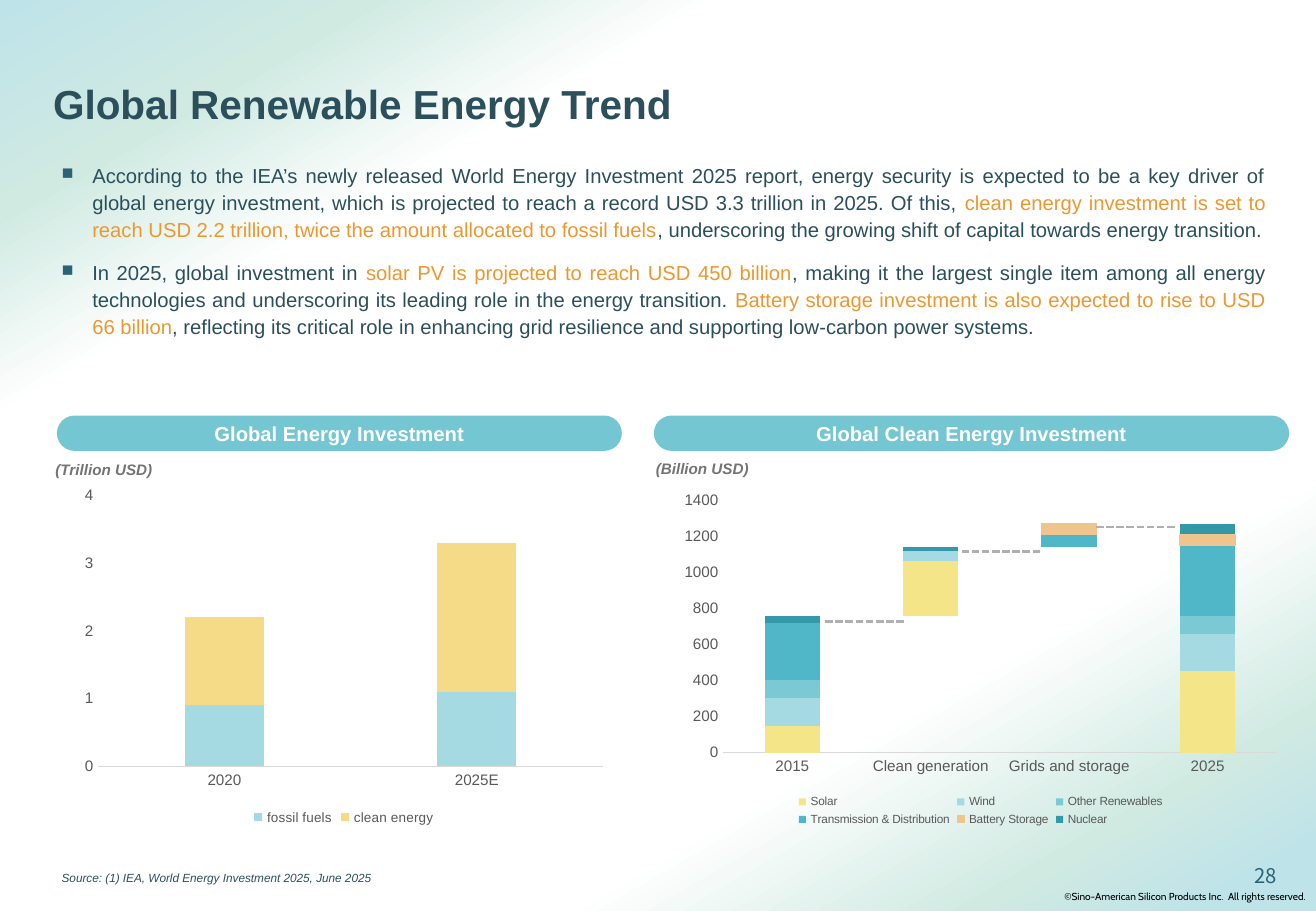
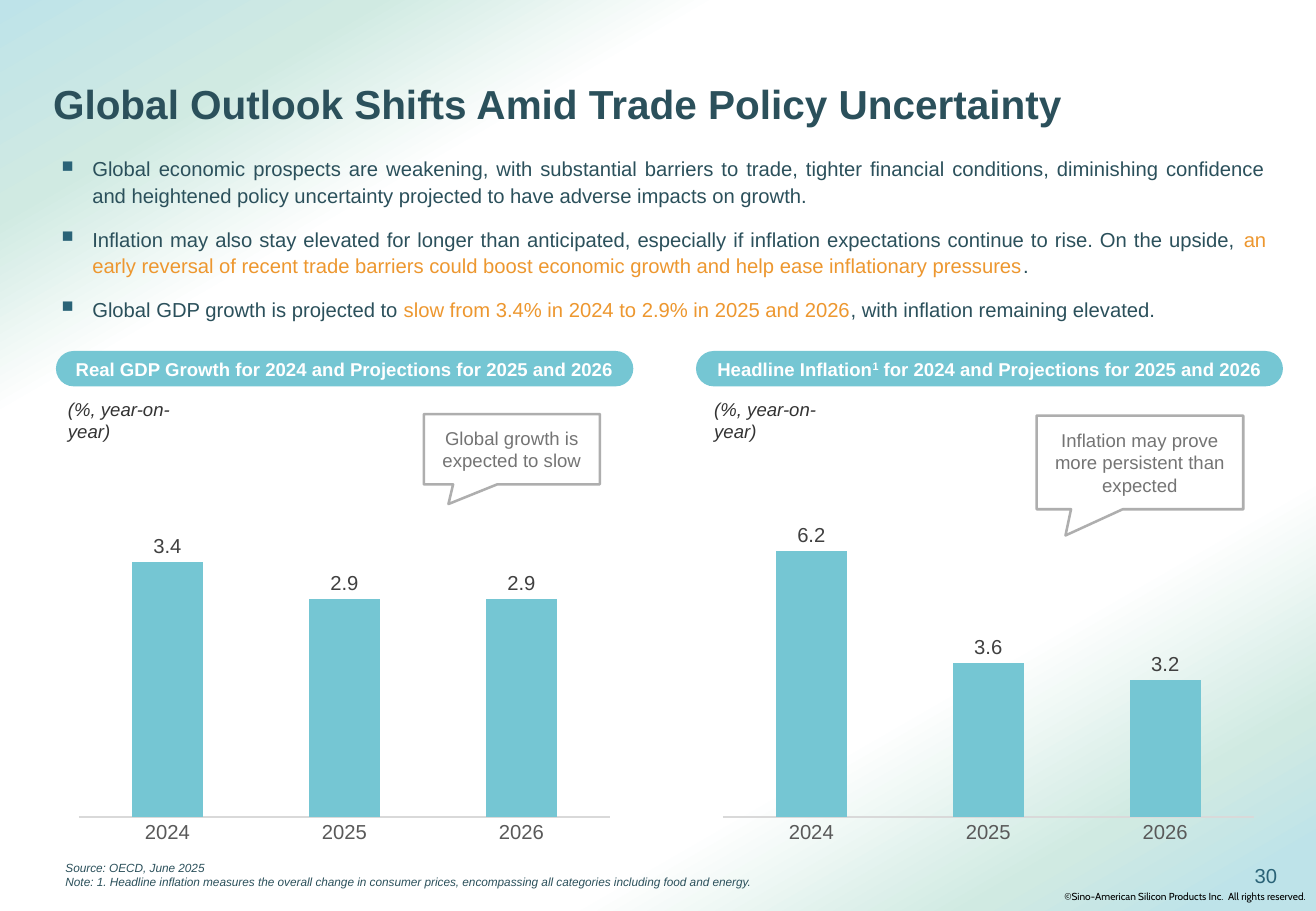
import pptx
import pptx.chart.data
import pptx.dml.color
import pptx.enum.chart
import pptx.enum.dml
import pptx.enum.shapes
import pptx.enum.text
import pptx.oxml
import pptx.oxml.ns
import pptx.util
from pptx.dml.color import RGBColor
from pptx.util import Cm

WIDTH, HEIGHT = Cm(27.51), Cm(19.05)

# Colours
INK = RGBColor(0x2B, 0x50, 0x5B)
BULLET = RGBColor(0x2A, 0x63, 0x77)
ORANGE = RGBColor(0xED, 0x97, 0x2F)
TEAL = RGBColor(0x75, 0xC6, 0xD3)
PALE_TEAL = RGBColor(0xA5, 0xDA, 0xE3)
SOFT_TEAL = RGBColor(0x7C, 0xC9, 0xD6)
MID_TEAL = RGBColor(0x50, 0xB7, 0xC8)
DEEP_TEAL = RGBColor(0x35, 0x98, 0xA9)
SAND = RGBColor(0xF5, 0xDB, 0x87)
YELLOW = RGBColor(0xF4, 0xE5, 0x88)
PEACH = RGBColor(0xEF, 0xC5, 0x8D)
WHITE = RGBColor(0xFF, 0xFF, 0xFF)
BLACK = RGBColor(0x00, 0x00, 0x00)
CHARCOAL = RGBColor(0x33, 0x33, 0x33)
LABEL_GREY = RGBColor(0x40, 0x40, 0x40)
AXIS_GREY = RGBColor(0x59, 0x59, 0x59)
TEXT_GREY = RGBColor(0x74, 0x74, 0x74)
BORDER_GREY = RGBColor(0xAE, 0xAE, 0xAE)
DASH_GREY = RGBColor(0xB0, 0xB0, 0xB0)
RULE_GREY = RGBColor(0xD9, 0xD9, 0xD9)
SKY = RGBColor(0xBE, 0xE3, 0xE9)
MINT = RGBColor(0xD0, 0xEA, 0xE2)

BACKDROP = [(0, SKY), (13, MINT), (25, WHITE), (74, WHITE), (88, MINT), (96, SKY)]

ALIGN = pptx.enum.text.PP_ALIGN
MIDDLE = pptx.enum.text.MSO_ANCHOR.MIDDLE
SHAPE = pptx.enum.shapes.MSO_SHAPE
CHART = pptx.enum.chart.XL_CHART_TYPE


def add_xml(parent, tag, **attributes):
    """Append a DrawingML element and return it."""
    child = pptx.oxml.parse_xml(f"<a:{tag} {pptx.oxml.ns.nsdecls('a')}/>")
    for name, value in attributes.items():
        child.set(name, str(value))
    parent.append(child)
    return child


def set_font(font, size, color, name="Arial", bold=False, italic=False):
    font.size, font.name = pptx.util.Pt(size), name
    font.bold, font.italic = bold, italic
    font.color.rgb = color


def write(frame, paragraphs, align=ALIGN.LEFT, line_spacing=None, space_before=0,
          bullet=None, superscript=False, **font):
    """Fill a frame; a paragraph is text or a list of text and (text, format) runs."""
    for index, runs in enumerate(paragraphs):
        paragraph = frame.add_paragraph() if index else frame.paragraphs[0]
        if bullet:
            properties = paragraph._p.get_or_add_pPr()
            properties.set("marL", str(Cm(0.64)))
            properties.set("indent", str(-Cm(0.64)))
            add_xml(add_xml(properties, "buClr"), "srgbClr", val=BULLET)
            add_xml(properties, "buSzPct", val=80000)
            add_xml(properties, "buChar", char=bullet)
        paragraph.alignment = align
        if line_spacing:
            paragraph.line_spacing = line_spacing
        if index and space_before:
            paragraph.space_before = pptx.util.Pt(space_before)
        for part in [runs] if isinstance(runs, str) else runs:
            text, changes = (part, {}) if isinstance(part, str) else part
            changes = dict(changes)
            raised = changes.pop("superscript", superscript)
            run = paragraph.add_run()
            run.text = text
            set_font(run.font, **{**font, **changes})
            if raised:
                run._r.get_or_add_rPr().set("baseline", "30000")


def highlight(text):
    return text, {"color": ORANGE}


class Deck:
    """Holds the presentation, its style and the current slide."""

    def __init__(self):
        self.presentation = pptx.Presentation()
        self.presentation.slide_width = WIDTH
        self.presentation.slide_height = HEIGHT
        self.slide = None

    def new_slide(self, title, number, number_font="Arial"):
        self.slide = self.presentation.slides.add_slide(self.presentation.slide_layouts[6])
        self.backdrop()
        self.text(21.95, 18.36, 5.56, 0.58,
                  ["©Sino-American Silicon Products Inc.  All rights reserved."],
                  margins=(0.3, 0), line_spacing=1.5, size=6, color=BLACK, name="Cabin")
        self.text(0.86, 1.14, 24, 2.16, [title], anchor=MIDDLE, line_spacing=0.9,
                  size=24, color=INK, bold=True)
        self.text(25.98, 17.93, 1.52, 1.1, [number], size=12, color=BULLET, name=number_font)

    def backdrop(self):
        backdrop = self.shape(SHAPE.RECTANGLE, 0, 0, WIDTH.cm, HEIGHT.cm)
        backdrop.line.fill.background()
        backdrop.fill.gradient()
        backdrop.fill.gradient_angle = 300
        stops = backdrop._element.spPr.find(".//" + pptx.oxml.ns.qn("a:gsLst"))
        for stop in list(stops):
            stops.remove(stop)
        for position, color in BACKDROP:
            add_xml(add_xml(stops, "gs", pos=position * 1000), "srgbClr", val=color)

    def shape(self, kind, left, top, width, height):
        shape = self.slide.shapes.add_shape(kind, Cm(left), Cm(top), Cm(width), Cm(height))
        shape.shadow.inherit = False
        return shape

    def text(self, left, top, width, height, paragraphs, wrap=True, anchor=None,
             margins=None, **style):
        frame = self.slide.shapes.add_textbox(
            Cm(left), Cm(top), Cm(width), Cm(height)).text_frame
        frame.word_wrap = wrap
        if anchor is not None:
            frame.vertical_anchor = anchor
        if margins:
            frame.margin_left, frame.margin_right = map(Cm, margins)
        write(frame, paragraphs, **style)

    def bullets(self, top, height, paragraphs):
        self.text(1.04, top, 25.68, height, paragraphs, bullet="■", align=ALIGN.JUSTIFY,
                  line_spacing=1.1, space_before=10, size=12, color=INK)

    def source(self, left, top, width, height, lines, **style):
        self.text(left, top, width, height, lines, wrap=False,
                  size=7, color=INK, italic=True, **style)

    def heading(self, left, top, width, runs, size):
        pill = self.shape(SHAPE.ROUNDED_RECTANGLE, left, top, width, 0.74)
        pill.adjustments[0] = 0.5
        pill.fill.solid()
        pill.fill.fore_color.rgb = TEAL
        pill.line.fill.background()
        frame = pill.text_frame
        frame.margin_left = frame.margin_right = frame.margin_top = frame.margin_bottom = 0
        frame.vertical_anchor = MIDDLE
        write(frame, [runs], align=ALIGN.CENTER, size=size, color=WHITE, bold=True)

    def callout(self, left, top, width, height, text):
        callout = self.shape(SHAPE.RECTANGULAR_CALLOUT, left, top, width, height)
        callout.adjustments[0], callout.adjustments[1] = -0.36, 0.78
        callout.fill.background()
        callout.line.color.rgb = BORDER_GREY
        callout.line.width = pptx.util.Pt(1.5)
        callout.text_frame.vertical_anchor = MIDDLE
        write(callout.text_frame, [text], align=ALIGN.CENTER, size=11, color=TEXT_GREY)

    def dash(self, left, right, y):
        dash = self.slide.shapes.add_connector(
            pptx.enum.shapes.MSO_CONNECTOR.STRAIGHT, Cm(left), Cm(y), Cm(right), Cm(y))
        dash.line.color.rgb = DASH_GREY
        dash.line.width = pptx.util.Pt(1.5)
        dash.line.dash_style = pptx.enum.dml.MSO_LINE.SQUARE_DOT
        add_xml(dash._element.spPr, "effectLst")

    def chart(self, kind, box, categories, series, gap, maximum, axis_size):
        """Draw columns; series holds (name, values, fill colour or None)."""
        data = pptx.chart.data.CategoryChartData()
        data.categories = categories
        for name, values, _ in series:
            data.add_series(name, values)
        chart = self.slide.shapes.add_chart(kind, *map(Cm, box), data).chart
        chart.has_title = chart.has_legend = False
        set_font(chart.font, 10, BLACK)
        plot = chart.plots[0]
        plot.vary_by_categories = False
        plot.gap_width = gap
        for column, (_, _, color) in zip(plot.series, series):
            if color is None:
                column.format.fill.background()
            else:
                column.format.fill.solid()
                column.format.fill.fore_color.rgb = color
            column.format.line.fill.background()
        for axis in (chart.category_axis, chart.value_axis):
            axis.has_major_gridlines = False
            axis.major_tick_mark = pptx.enum.chart.XL_TICK_MARK.NONE
            set_font(axis.tick_labels.font, axis_size, AXIS_GREY)
        chart.category_axis.format.line.color.rgb = RULE_GREY
        chart.category_axis.format.line.width = pptx.util.Pt(0.75)
        chart.value_axis.format.line.fill.background()
        chart.value_axis.minimum_scale, chart.value_axis.maximum_scale = 0, maximum
        return chart

    def stacked_chart(self, box, categories, series, gap, maximum, step, legend_size):
        chart = self.chart(CHART.COLUMN_STACKED, box, categories, series, gap, maximum, 9)
        chart.plots[0].overlap = 100
        chart.value_axis.major_unit = step
        chart.has_legend = True
        chart.legend.position = pptx.enum.chart.XL_LEGEND_POSITION.BOTTOM
        chart.legend.include_in_layout = False
        set_font(chart.legend.font, legend_size, AXIS_GREY)
        # Keep the invisible base series out of the legend
        for index, (_, _, color) in enumerate(series):
            if color is None:
                entry = pptx.oxml.parse_xml(
                    f'<c:legendEntry {pptx.oxml.ns.nsdecls("c")}>'
                    f'<c:idx val="{index}"/><c:delete val="1"/></c:legendEntry>')
                chart.legend._element.insert(1, entry)
        return chart

    def labelled_chart(self, box, categories, values, maximum):
        chart = self.chart(CHART.COLUMN_CLUSTERED, box, categories,
                           [("Series 1", values, TEAL)], 150, maximum, 12)
        chart.value_axis.visible = False
        labels = chart.plots[0].series[0].data_labels
        labels.show_value = True
        labels.position = pptx.enum.chart.XL_LABEL_POSITION.OUTSIDE_END
        set_font(labels.font, 12, LABEL_GREY)


def energy_slide(deck):
    deck.new_slide("Global Renewable Energy Trend", "28", "Noto Sans CJK SC")
    deck.bullets(3.25, 5.41, [
        ["According to the IEA’s newly released World Energy Investment 2025 report, energy security is expected to be a key driver of global energy investment, which is projected to reach a record USD 3.3 trillion in 2025. Of this, ",
         highlight("clean energy investment is set to reach USD 2.2 trillion, twice the amount allocated to fossil fuels"),
         ", underscoring the growing shift of capital towards energy transition."],
        ["In 2025, global investment in ",
         highlight("solar PV is projected to reach USD 450 billion"),
         ", making it the largest single item among all energy technologies and underscoring its leading role in the energy transition. ",
         highlight("Battery storage investment is also expected to rise to USD 66 billion"),
         ", reflecting its critical role in enhancing grid resilience and supporting low-carbon power systems."]])
    deck.source(1.04, 18.08, 7.16, 0.53,
                ["Source: (1) IEA, World Energy Investment 2025, June 2025"],
                line_spacing=pptx.util.Pt(8.4))
    unit_style = dict(wrap=False, size=9, color=TEXT_GREY, bold=True, italic=True)

    # Total investment
    deck.heading(1.19, 8.69, 11.81, "Global Energy Investment", 12)
    deck.stacked_chart((1.55, 10.03, 11.28, 7.32), ["2020", "2025E"], [
        ("fossil fuels", (0.9, 1.1), PALE_TEAL),
        ("clean energy", (1.3, 2.2), SAND)], gap=219, maximum=4, step=1, legend_size=8)
    deck.text(0.91, 9.5, 2.57, 0.64, ["(Trillion USD)"], **unit_style)

    # Clean energy bridge
    deck.heading(13.67, 8.69, 13.28, "Global Clean Energy Investment", 12)
    bridge = deck.stacked_chart(
        (14.05, 10.13, 12.9, 7.24),
        ["2015", "Clean generation", "Grids and storage", "2025"], [
            ("Series 1", (0, 760, 1140, 0), None),
            ("Solar", (150, 300, 0, 450), YELLOW),
            ("Wind", (150, 60, 0, 210), PALE_TEAL),
            ("Other Renewables", (100, 0, 0, 100), SOFT_TEAL),
            ("Transmission & Distribution", (320, 0, 70, 390), MID_TEAL),
            ("Battery Storage", (0, 0, 60, 60), PEACH),
            ("Nuclear", (40, 20, 0, 60), DEEP_TEAL)],
        gap=150, maximum=1400, step=200, legend_size=7)
    battery_line = bridge.plots[0].series[5].format.line
    battery_line.color.rgb = PEACH
    battery_line.width = pptx.util.Pt(0.75)
    deck.text(13.46, 9.47, 2.46, 0.64, ["(Billion USD)"], **unit_style)
    for left, y in ((17.25, 13), (20.1, 11.53), (22.91, 11.02)):
        deck.dash(left, left + 1.66, y)


def outlook_slide(deck):
    deck.new_slide("Global Outlook Shifts Amid Trade Policy Uncertainty", "30")
    deck.bullets(3.1, 4.52, [
        "Global economic prospects are weakening, with substantial barriers to trade, tighter financial conditions, diminishing confidence and heightened policy uncertainty projected to have adverse impacts on growth.",
        ["Inflation may also stay elevated for longer than anticipated, especially if inflation expectations continue to rise. On the upside, ",
         highlight("an early reversal of recent trade barriers could boost economic growth and help ease inflationary pressures"), "."],
        ["Global GDP growth is projected to ",
         highlight("slow from 3.4% in 2024 to 2.9% in 2025 and 2026"),
         ", with inflation remaining elevated."]])

    # Growth and inflation panels
    period = " for 2024 and Projections for 2025 and 2026"
    inflation = ["Headline Inflation", ("1", {"superscript": True}), period]
    panels = [
        (1.17, 12.07, "Real GDP Growth" + period, 1.17, 1.42, (3.4, 2.9, 2.9), 4,
         (8.86, 8.66, 3.68, 1.47), "Global growth is expected to slow"),
        (14.55, 12.27, inflation, 14.68, 14.88, (6.2, 3.6, 3.2), 7,
         (21.67, 8.69, 4.32, 1.96), "Inflation may prove more persistent than expected")]
    for left, width, heading, unit_left, chart_left, values, maximum, box, remark in panels:
        deck.heading(left, 7.34, width, heading, 11)
        deck.text(unit_left, 8.2, 3.45, 0.74, ["(%, year-on-year)"],
                  size=11, color=CHARCOAL, italic=True)
        deck.labelled_chart((chart_left, 10.67, 11.56, 7.11),
                            ["2024", "2025", "2026"], values, maximum)
        deck.callout(*box, remark)

    deck.source(1.12, 17.88, 15.06, 0.86, [
        "Source: OECD, June 2025",
        "Note: 1. Headline inflation measures the overall change in consumer prices, encompassing all categories including food and energy."])


def main():
    deck = Deck()
    energy_slide(deck)
    outlook_slide(deck)
    deck.presentation.save("out.pptx")


if __name__ == "__main__":
    main()
